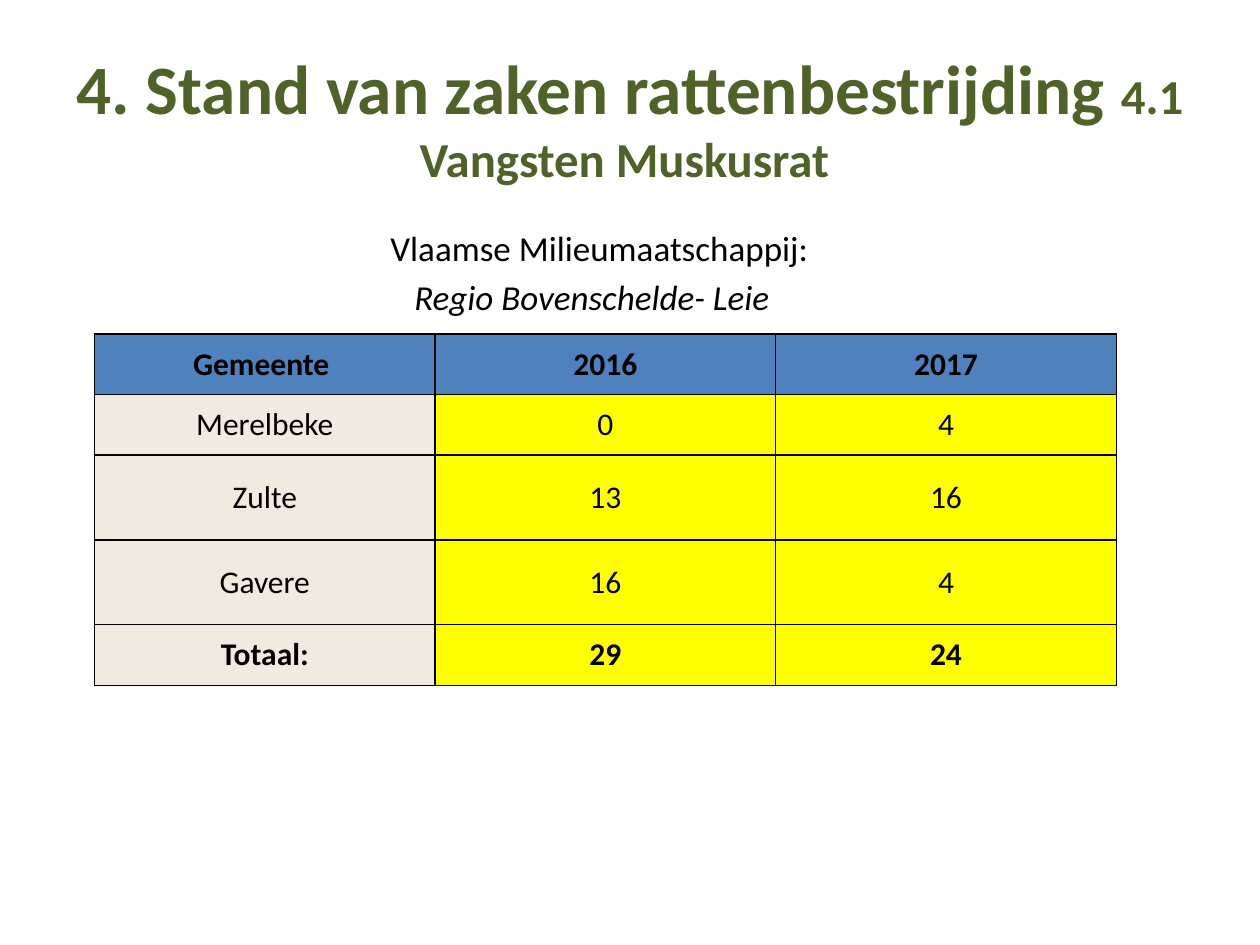
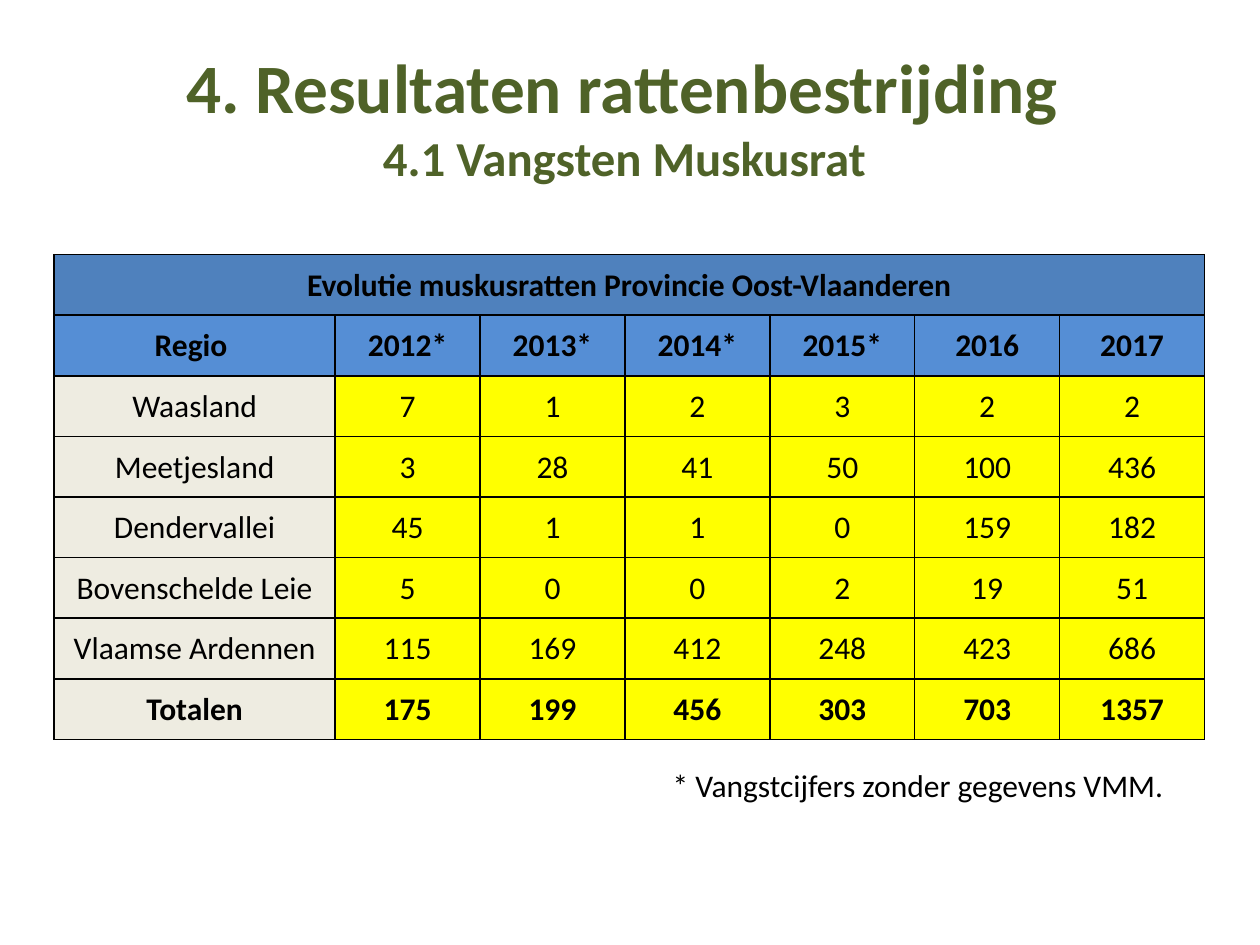
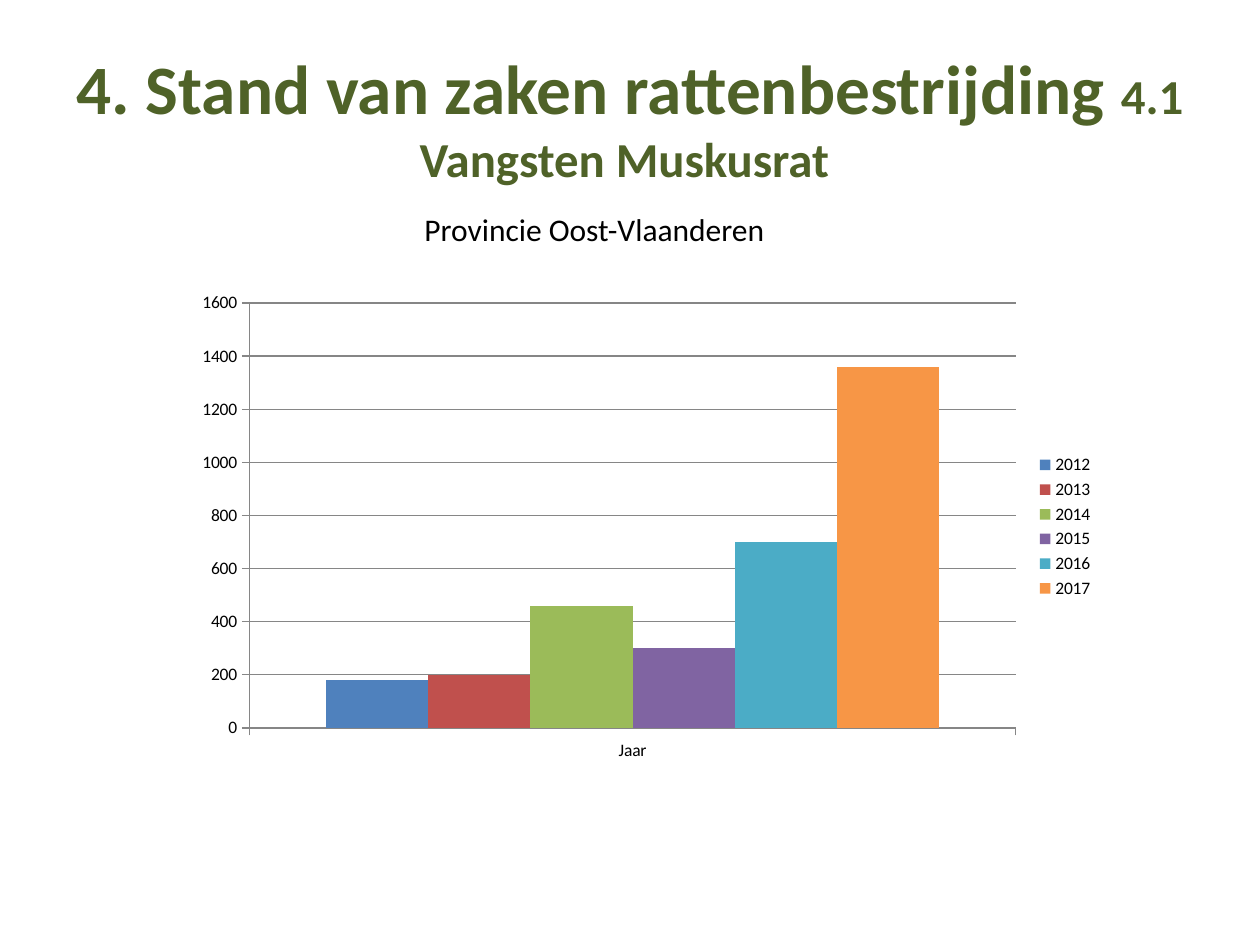
from lxml import etree
from pptx import Presentation
from pptx import util as u
from pptx.chart.data import CategoryChartData
from pptx.dml.color import RGBColor
from pptx.enum import chart as ch, text as t
from pptx.oxml.ns import qn

FONT = "Calibri"
GREEN = RGBColor(0x4F, 0x62, 0x28)
BLACK = RGBColor(0, 0, 0)
GREY = RGBColor(0x86, 0x86, 0x86)
BLUE = RGBColor(0x4F, 0x81, 0xBD)
SKY = RGBColor(0x55, 0x8E, 0xD5)
CREAM = RGBColor(0xEE, 0xEC, 0xE1)
YELLOW = RGBColor(0xFF, 0xFF, 0)
BARS = [BLUE, RGBColor(0xC0, 0x50, 0x4D), RGBColor(0x9B, 0xBB, 0x59),
        RGBColor(0x80, 0x64, 0xA2), RGBColor(0x4B, 0xAC, 0xC6),
        RGBColor(0xF7, 0x96, 0x46)]

STATE = "4. Stand van zaken rattenbestrijding "
RESULT = "4. Resultaten rattenbestrijding "
CATCH = "4.1 Vangsten Muskusrat "

TOWNS = [
    ("Gemeente ", 2016, 2017),
    ("Merelbeke", 0, 4),
    ("Zulte", 13, 16),
    ("Gavere", 16, 4),
    ("Totaal:", 29, 24),
]
BANNER = "Evolutie muskusratten Provincie Oost-Vlaanderen"
AREAS = [
    ("Regio ", "2012*", "2013*", "2014*", "2015*", 2016, 2017),
    ("Waasland", 7, 1, 2, 3, 2, 2),
    ("Meetjesland", 3, 28, 41, 50, 100, 436),
    ("Dendervallei", 45, 1, 1, 0, 159, 182),
    ("Bovenschelde Leie", 5, 0, 0, 2, 19, 51),
    ("Vlaamse Ardennen", 115, 169, 412, 248, 423, 686),
    ("Totalen", 175, 199, 456, 303, 703, 1357),
]

prs = Presentation()
prs.slide_width, prs.slide_height = u.Inches(10), u.Inches(7.5)


def box(slide, *at, wrap=True):
    frame = slide.shapes.add_textbox(*map(u.Inches, at)).text_frame
    frame.word_wrap = wrap
    return frame


def write(para, words, size=18, color=BLACK, bold=False, italic=False):
    run = para.add_run()
    run.text = str(words)
    font = run.font
    font.name, font.size, font.color.rgb = FONT, u.Pt(size), color
    font.bold, font.italic = bold, italic


def page(head, top=0.3, split=False):
    """Add a slide with the shared two-size title."""
    slide = prs.slides.add_slide(prs.slide_layouts[6])
    frame = box(slide, 0.5, top, 9, 1.25)
    frame.vertical_anchor = t.MSO_ANCHOR.MIDDLE
    frame.margin_left = frame.margin_right = u.Inches(0.08)
    para = frame.paragraphs[0]
    para.alignment = t.PP_ALIGN.CENTER
    write(para, head, 39.6, GREEN, True)
    if split:
        para.add_line_break()
    write(para, CATCH, 27.9, GREEN, True)
    return slide


def edge(cell):
    """Draw a 1 pt black border on all four sides."""
    props = cell._tc.get_or_add_tcPr()
    for side in "LRTB":
        line = etree.SubElement(props, qn(f"a:ln{side}"), w=str(u.Pt(1)))
        fill = etree.SubElement(line, qn("a:solidFill"))
        etree.SubElement(fill, qn("a:srgbClr"), val=str(BLACK))


def share(total, parts):
    """Split a length in proportion to the parts."""
    return [u.Inches(total * part / sum(parts)) for part in parts]


def grid(slide, rows, at, wide, high, heads, inset=None):
    """Fill a table; wide and high are shares, heads colours of head rows."""
    table = slide.shapes.add_table(
        len(rows), len(wide), *map(u.Inches, at)).table
    for col, size in zip(table.columns, share(at[2], wide)):
        col.width = size
    for row, size in zip(table.rows, share(at[3], high)):
        row.height = size
    for r, row in enumerate(rows):
        bold = r < len(heads) or r == len(rows) - 1
        for c in range(len(wide)):
            cell = table.cell(r, c)
            edge(cell)
            cell.fill.solid()
            body = YELLOW if c else CREAM
            cell.fill.fore_color.rgb = heads[r] if r < len(heads) else body
            cell.vertical_anchor = t.MSO_ANCHOR.MIDDLE
            if inset is not None:
                cell.margin_left = cell.margin_right = u.Inches(inset)
                cell.margin_top, cell.margin_bottom = u.Inches(inset), 0
            if c < len(row):
                para = cell.text_frame.paragraphs[0]
                para.alignment = t.PP_ALIGN.CENTER
                write(para, row[c], bold=bold)
        if len(row) == 1:
            table.cell(r, 0).merge(table.cell(r, len(wide) - 1))


def towns():
    slide = page(STATE)
    frame = box(slide, 3, 1.75, 6.5, 0.9)
    write(frame.paragraphs[0], "Vlaamse Milieumaatschappij: ", 20)
    para = frame.add_paragraph()
    para.space_before = u.Pt(4)
    para._p.get_or_add_pPr().set("marL", str(u.Inches(0.19)))
    write(para, "Regio Bovenschelde- Leie", 20, italic=True)
    grid(slide, TOWNS, (0.75, 2.65, 8.11, 2.79), [1] * 3,
         [0.48, 0.48, 0.67, 0.67, 0.48], [BLUE])


def areas():
    slide = page(RESULT, 0.29, split=True)
    rows = [(BANNER,)] + AREAS
    grid(slide, rows, (0.43, 2.02, 9.13, 3.85), [2.23] + [1.15] * 6,
         [1] * len(rows), [BLUE, SKY], 0.01)
    note = box(slide, 5.24, 6.03, 4.2, 0.4, wrap=False)
    write(note.paragraphs[0], "* Vangstcijfers zonder gegevens VMM.")


def trend():
    slide = page(STATE)
    label = box(slide, 3.27, 1.62, 3.15, 0.4)
    write(label.paragraphs[0], "Provincie Oost-Vlaanderen")
    data = CategoryChartData()
    data.categories = ["Jaar"]
    for year, total in zip(AREAS[0][1:], AREAS[-1][1:]):
        data.add_series(str(year).rstrip("*"), [round(total, -1)])
    chart = slide.shapes.add_chart(
        ch.XL_CHART_TYPE.COLUMN_CLUSTERED,
        *map(u.Inches, (1.46, 2.25, 7.32, 3.86)), data).chart
    chart.has_title = False
    chart.font.name, chart.font.size = FONT, u.Pt(10)
    chart.font.color.rgb = BLACK
    chart.has_legend = True
    chart.legend.position = ch.XL_LEGEND_POSITION.RIGHT
    chart.legend.include_in_layout = False
    plot = chart.plots[0]
    plot.gap_width, plot.overlap, plot.vary_by_categories = 150, 0, False
    for series, color in zip(plot.series, BARS):
        series.format.fill.solid()
        series.format.fill.fore_color.rgb = color
    values = chart.value_axis
    values.has_major_gridlines = True
    for axis in (chart.category_axis, values):
        axis.major_tick_mark = ch.XL_TICK_MARK.OUTSIDE
    for part in (chart.category_axis, values, values.major_gridlines):
        part.format.line.color.rgb = GREY
        part.format.line.width = u.Pt(0.75)


towns()
areas()
trend()
prs.save("out.pptx")
